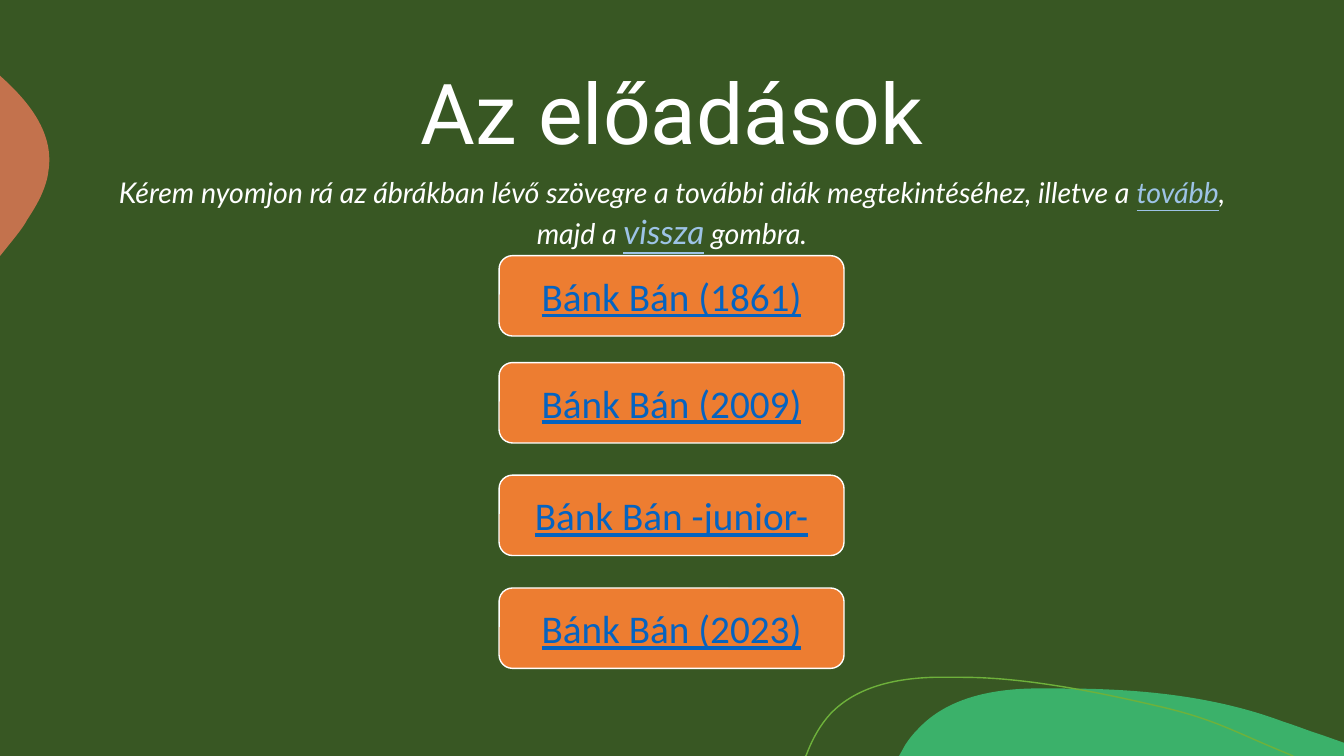
from pptx import Presentation
from pptx.dml.color import RGBColor
from pptx.enum.shapes import MSO_SHAPE
from pptx.enum.text import MSO_ANCHOR, PP_ALIGN
from pptx.oxml.ns import qn
from pptx.util import Pt

COLORS = {"back": "385723", "green": "3BB16A", "clay": "C3724D", "lime": "6EB13B",
          "orange": "ED7D31", "white": "FFFFFF", "link": "0563C1", "pale": "9DC3E6"}


def color(name):
    return RGBColor.from_string(COLORS[name])


def outline(start, parts, close):
    dots = [part[at:at + 2] for part in [start] + parts for at in range(0, len(part), 2)]
    dots = [(round(x * 100), round(y * 100)) for x, y in dots]
    pen = slide.shapes.build_freeform(*dots[0], scale=Pt(1) / 100)
    pen.add_line_segments(dots[1:], close=close)
    shape = pen.convert_to_shape()
    shape.shadow.inherit = False
    lines = iter(list(shape.element.iter(qn("a:lnTo"))))
    for part in parts:
        first = next(lines)
        if len(part) == 6:
            first.tag = qn("a:cubicBezTo")
            for extra in (next(lines), next(lines)):
                first.append(extra[0])
                extra.getparent().remove(extra)
    return shape


deck = Presentation()
deck.slide_width, deck.slide_height = Pt(960), Pt(540)
slide = deck.slides.add_slide(deck.slide_layouts[6])
slide.background.fill.solid()
slide.background.fill.fore_color.rgb = color("back")

hill = [(812.2, 491.8, 866.9, 496.8, 916.6, 515.5), (925.9, 518.4, 934.6, 522, 943.9, 524.9),
        (960, 530.6), (960, 540), (642.2, 540), (646.6, 532.1),
        (649.4, 527.8, 652.3, 524.2, 655.9, 520.6), (676.1, 499, 707, 492.5, 736.6, 491.8),
        (743.8, 491.8, 751, 491.8, 758.9, 491.8)]
blob = [(0.7, 54.7), (21.6, 73.4, 38.9, 95.8, 34.6, 122.4),
        (33.1, 134.6, 26.6, 146.2, 19.4, 157), (17.3, 161.3, 12.2, 167.8, 5.8, 175.7),
        (0, 182.9)]
for start, parts, fill in [((758.9, 491.8), hill, "green"), ((0, 54), blob, "clay")]:
    shape = outline(start, parts, True)
    shape.fill.solid()
    shape.fill.fore_color.rgb = color(fill)
    shape.line.fill.background()

curve = [(576, 539.3), (580.3, 527.8, 586, 517.7, 593.3, 509.8),
         (612, 490.3, 640.1, 484.6, 666.7, 483.8), (687.6, 483.8),
         (735.8, 483.8, 792, 496.1, 831.6, 505.4), (870.5, 514.8, 882.7, 523.4, 923.8, 540)]
wave = outline((575.3, 540), curve, False)
wave.fill.background()
wave.line.color.rgb = color("lime")
wave.line.width = Pt(1)

title = slide.shapes.add_textbox(Pt(60), Pt(0), Pt(840), Pt(120)).text_frame
title.word_wrap = True
title.vertical_anchor = MSO_ANCHOR.BOTTOM
para = title.paragraphs[0]
para.text = "Az előadások"
para.alignment = PP_ALIGN.CENTER
para.line_spacing = 0.9
para.font.name = "Roboto"
para.font.size = Pt(60)
para.font.color.rgb = color("white")

hint = slide.shapes.add_textbox(Pt(60), Pt(120), Pt(840), Pt(62.6)).text_frame
hint.word_wrap = True
para = hint.paragraphs[0]
para.alignment = PP_ALIGN.CENTER
para.line_spacing = 1.05
para.space_before = Pt(10)
para.font.name = "Lato"
para.font.italic = True
for text, size, tint in [
        ("Kérem nyomjon rá az ábrákban lévő szövegre a további diák megtekintéséhez, illetve a ",
         20.4, "white"),
        ("tovább", 20.4, "pale"), (", majd a ", 20.4, "white"),
        ("vissza", 23.8, "pale"), (" gombra.", 20.4, "white")]:
    run = para.add_run()
    run.text = text
    run.font.size = Pt(size)
    run.font.color.rgb = color(tint)
    run.font.underline = tint == "pale"

for label, top in [("Bánk Bán (1861)", 182.6), ("Bánk Bán (2009)", 259),
                   ("Bánk Bán -junior-", 339.4), ("Bánk Bán (2023)", 420)]:
    button = slide.shapes.add_shape(MSO_SHAPE.ROUNDED_RECTANGLE,
                                    Pt(356.5), Pt(top), Pt(246.4), Pt(57.4))
    button.shadow.inherit = False
    button.fill.solid()
    button.fill.fore_color.rgb = color("orange")
    button.line.color.rgb = color("white")
    button.line.width = Pt(1)
    button.text_frame.vertical_anchor = MSO_ANCHOR.MIDDLE
    para = button.text_frame.paragraphs[0]
    para.text = label
    para.alignment = PP_ALIGN.CENTER
    para.font.name = "Calibri"
    para.font.size = Pt(28)
    para.font.underline = True
    para.font.color.rgb = color("link")

deck.save("out.pptx")
